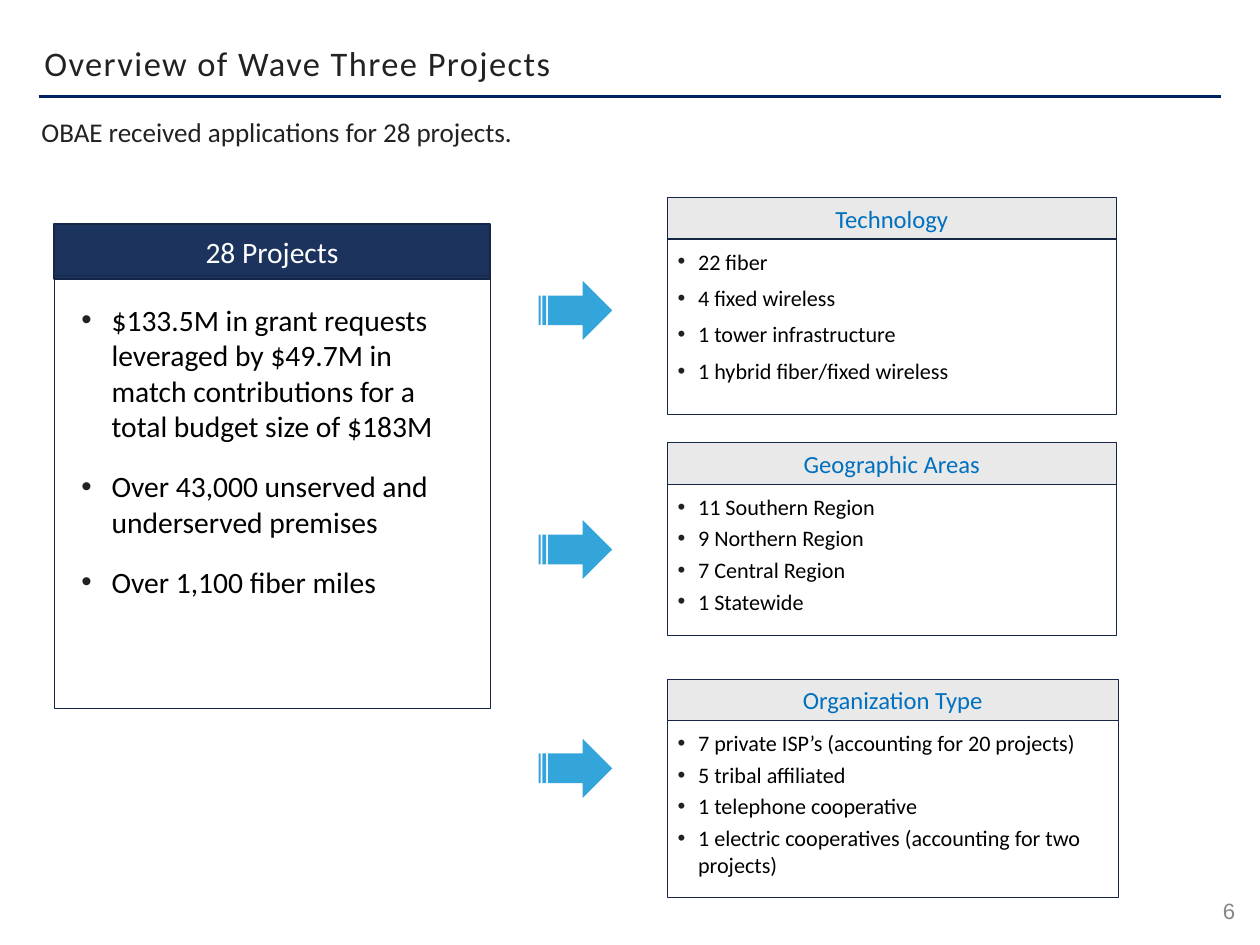
from lxml.etree import SubElement
from pptx import Presentation
from pptx.dml.color import RGBColor
from pptx.enum.shapes import MSO_CONNECTOR, MSO_SHAPE as SHAPE
from pptx.enum.text import MSO_ANCHOR as ANCHOR, PP_ALIGN as ALIGN
from pptx.oxml.ns import qn
from pptx.util import Emu, Pt

PX = 9144  # 100 px to the inch

WHITE = RGBColor(0xFF, 0xFF, 0xFF)
BLACK = RGBColor(0x00, 0x00, 0x00)
INK = RGBColor(0x22, 0x22, 0x22)
GREY = RGBColor(0x83, 0x87, 0x87)
PALE = RGBColor(0xE9, 0xE9, 0xE9)
RULE = RGBColor(0x00, 0x20, 0x60)
NAVY = RGBColor(0x1C, 0x33, 0x5E)
EDGE = RGBColor(0x15, 0x26, 0x46)
BLUE = RGBColor(0x00, 0x70, 0xC0)
SKY = RGBColor(0x34, 0xA5, 0xDA)


def px(n):
    return Emu(n * PX)


def write(sp, lines, size, color, font="Calibri", align=ALIGN.LEFT,
          anchor=ANCHOR.TOP, insets=(10, 5, 10, 5), wrap=True, gap=0,
          leading=None, tracking=None, indent=0, hang=0, bullet=None):
    """Fill a shape with one paragraph per line; insets run left, top, right, bottom."""
    tf = sp.text_frame
    tf.word_wrap = wrap
    tf.vertical_anchor = anchor
    tf.margin_left, tf.margin_top, tf.margin_right, tf.margin_bottom = map(px, insets)
    for i, line in enumerate(lines):
        p = tf.add_paragraph() if i else tf.paragraphs[0]
        p.alignment = align
        p.space_before = p.space_after = Pt(gap)
        if leading:
            p.line_spacing = leading
        pPr = p._p.get_or_add_pPr()
        pPr.set("marL", str(px(indent)))
        pPr.set("indent", str(px(-hang)))
        if bullet:
            clr = SubElement(pPr, qn("a:buClr"))
            SubElement(clr, qn("a:srgbClr"), val=str(INK))
            SubElement(pPr, qn("a:buFont"), typeface="Arial")
            SubElement(pPr, qn("a:buChar"), char=bullet)
        r = p.add_run()
        r.text = line
        r.font.name, r.font.size, r.font.color.rgb = font, Pt(size), color
        if tracking:
            r._r.get_or_add_rPr().set("spc", str(round(tracking * 100)))


class Deck:
    def __init__(self, width, height):
        self.prs = Presentation()
        self.prs.slide_width, self.prs.slide_height = px(width), px(height)
        self.s = self.prs.slides.add_slide(self.prs.slide_layouts[6])

    def text(self, x, y, w, h, line, size, color, **fmt):
        sp = self.s.shapes.add_textbox(px(x), px(y), px(w), px(h))
        write(sp, [line], size, color, **fmt)

    def rule(self, x1, x2, y):
        ln = self.s.shapes.add_connector(MSO_CONNECTOR.STRAIGHT, px(x1), px(y), px(x2), px(y))
        ln.line.color.rgb, ln.line.width = RULE, Pt(2)
        SubElement(ln._element.spPr, qn("a:effectLst"))

    def shape(self, kind, x, y, w, h, fill=None, line=None):
        sp = self.s.shapes.add_shape(kind, px(x), px(y), px(w), px(h))
        sp.shadow.inherit = False
        if fill is None:
            sp.fill.background()
        else:
            sp.fill.solid()
            sp.fill.fore_color.rgb = fill
        if line is None:
            sp.line.fill.background()
        else:
            sp.line.color.rgb, sp.line.width = EDGE, Pt(line)
        return sp

    def header(self, x, y, w, h, title, size, color, fill):
        sp = self.shape(SHAPE.RECTANGLE, x, y, w, h, fill, 1)
        write(sp, [title], size, color, align=ALIGN.CENTER, anchor=ANCHOR.MIDDLE)

    def bullets(self, x, y, w, h, lines, size, **fmt):
        sp = self.shape(SHAPE.RECTANGLE, x, y, w, h, line=0.75)
        write(sp, lines, size, BLACK, bullet="•", **fmt)

    def arrow(self, x, y):
        self.shape(SHAPE.STRIPED_RIGHT_ARROW, x, y, 83, 67, SKY)


# top, width, body height, paragraph gap, arrow top, title, lines
CATEGORIES = [
    (223, 507, 198, 4, 317, "Technology",
     ["22 fiber", "4 fixed wireless", "1 tower infrastructure",
      "1 hybrid fiber/fixed wireless"]),
    (500, 507, 171, 2, 587, "Geographic Areas",
     ["11 Southern Region", "9 Northern Region", "7 Central Region", "1 Statewide"]),
    (767, 509, 199, 2, 834, "Organization Type",
     ["7 private ISP’s (accounting for 20 projects)", "5 tribal affiliated",
      "1 telephone cooperative",
      "1 electric cooperatives (accounting for two projects)"]),
]
SUMMARY = [
    "$133.5M in grant requests leveraged by $49.7M in match contributions "
    "for a total budget size of $183M",
    "Over 43,000 unserved and underserved premises",
    "Over 1,100 fiber miles",
]


def main():
    deck = Deck(1422, 1067)
    tight = (6, 6, 6, 6)
    deck.rule(44, 1378, 109)
    deck.text(44, 50, 1378, 50, "Overview of Wave Three Projects", 28, INK,
              anchor=ANCHOR.BOTTOM, insets=tight, leading=0.8, tracking=1.2)
    deck.text(1358, 1013, 42, 35, "6", 18, GREY, font="Arial", align=ALIGN.RIGHT,
              insets=tight, wrap=False, leading=0.8)
    deck.text(26, 126, 1348, 47, "OBAE received applications for 28 projects.",
              22, INK, gap=4, indent=11)

    deck.header(61, 253, 492, 62, "28 Projects", 24, WHITE, NAVY)
    deck.bullets(61, 311, 492, 489, SUMMARY, 24, gap=10, indent=45, hang=34,
                 insets=(20, 30, 20, 20))

    for top, width, height, gap, arrow_top, title, lines in CATEGORIES:
        deck.header(753, top, width, 47, title, 20, BLUE, PALE)
        deck.bullets(753, top + 47, width, height, lines, 18, gap=gap,
                     indent=25, hang=23, insets=(10, 10, 10, 10))
        deck.arrow(608, arrow_top)

    deck.prs.save("out.pptx")


if __name__ == "__main__":
    main()
